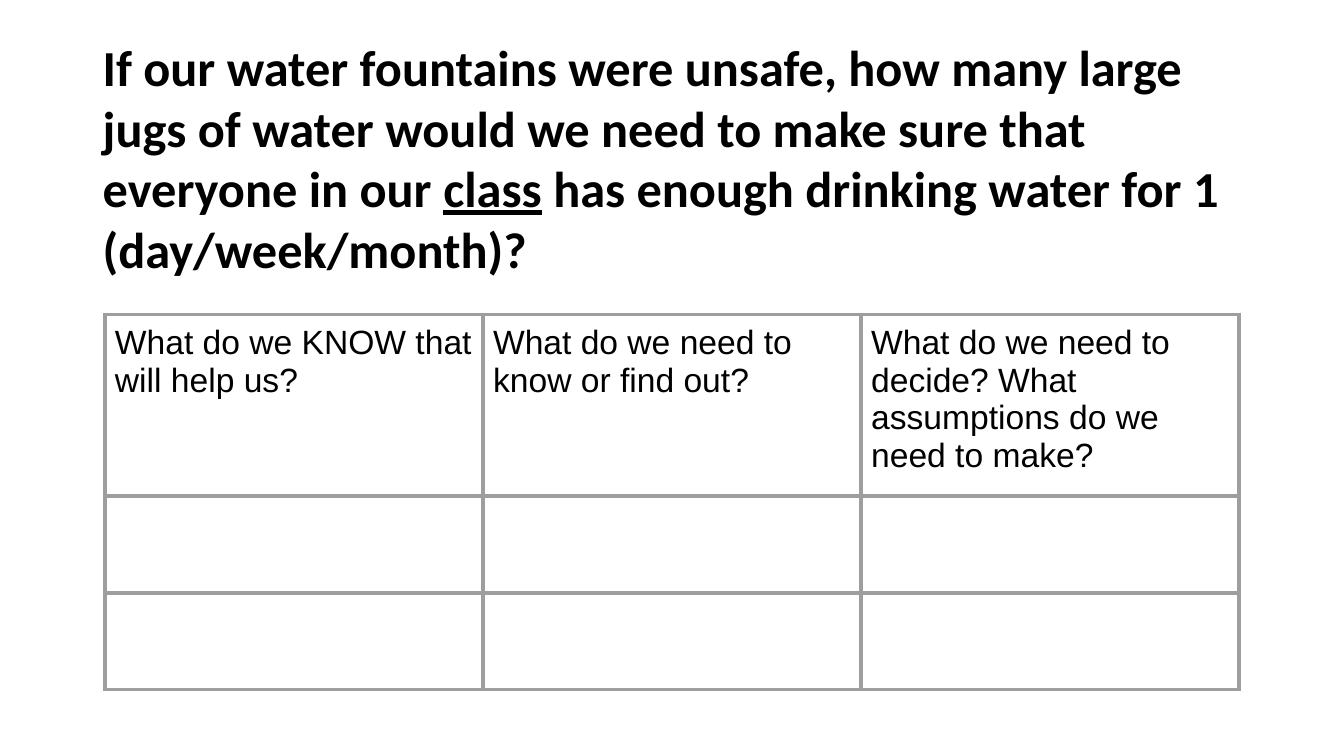
from lxml import etree
from pptx import Presentation
from pptx.dml.color import RGBColor
from pptx.enum.text import MSO_ANCHOR
from pptx.oxml.ns import qn
from pptx.util import Inches, Pt

MIDDLE = MSO_ANCHOR.MIDDLE
COLOURS = {"text": "000000", "border": "9E9E9E", "paper": "FFFFFF"}
QUESTION = (
    ("If our water fountains were unsafe, how many large jugs of water "
     "would we need to make sure that everyone in our ", False),
    ("class", True),
    (" has enough drinking water for 1 (day/week/month)?", False),
)
HEADINGS = (
    "What do we KNOW that will help us?",
    "What do we need to know or find out?",
    "What do we need to decide? What assumptions do we need to make?",
)
ROW_HEIGHTS = (1.69, 0.96, 0.96)
BORDER_WIDTH = 3


def add_span(para, text, font="Arial", size=24, bold=False, underline=False):
    span = para.add_run()
    span.text = text
    span.font.name = font
    span.font.size = Pt(size)
    span.font.bold = bold
    span.font.underline = underline
    span.font.color.rgb = RGBColor.from_string(COLOURS["text"])


def add_question(page, left, top, width, height):
    box = page.shapes.add_textbox(Inches(left), Inches(top), Inches(width), Inches(height))
    frame = box.text_frame
    frame.word_wrap = True
    frame.vertical_anchor = MIDDLE
    for text, underline in QUESTION:
        add_span(frame.paragraphs[0], text, font="Calibri", size=36,
                 bold=True, underline=underline)


def style_cell(cell):
    """Give a cell its margins, four borders and plain fill."""
    cell.margin_left = cell.margin_right = Inches(0.1)
    cell.margin_top = cell.margin_bottom = Inches(0.1)
    properties = cell._tc.get_or_add_tcPr()
    for side in ("a:lnL", "a:lnR", "a:lnT", "a:lnB"):
        line = etree.SubElement(properties, qn(side), w=str(Pt(BORDER_WIDTH)))
        fill = etree.SubElement(line, qn("a:solidFill"))
        etree.SubElement(fill, qn("a:srgbClr"), val=COLOURS["border"])
    cell.fill.solid()
    cell.fill.fore_color.rgb = RGBColor.from_string(COLOURS["paper"])


def add_planning_table(page, left, top, width):
    table = page.shapes.add_table(
        len(ROW_HEIGHTS), len(HEADINGS), Inches(left), Inches(top),
        Inches(width), Inches(sum(ROW_HEIGHTS))).table
    table.horz_banding = False
    table.first_row = False
    for column in table.columns:
        column.width = Inches(width / len(HEADINGS))
    for row, height in zip(table.rows, ROW_HEIGHTS):
        row.height = Inches(height)
    for cell in table.iter_cells():
        style_cell(cell)
    for column, heading in enumerate(HEADINGS):
        add_span(table.cell(0, column).text_frame.paragraphs[0], heading)


def main():
    deck = Presentation()
    deck.slide_width = Inches(13.33)
    deck.slide_height = Inches(7.5)
    page = deck.slides.add_slide(deck.slide_layouts[6])
    add_question(page, 0.92, 0.4, 11.5, 2.32)
    add_planning_table(page, 1.04, 3.12, 11.25)
    deck.save("out.pptx")


if __name__ == "__main__":
    main()
